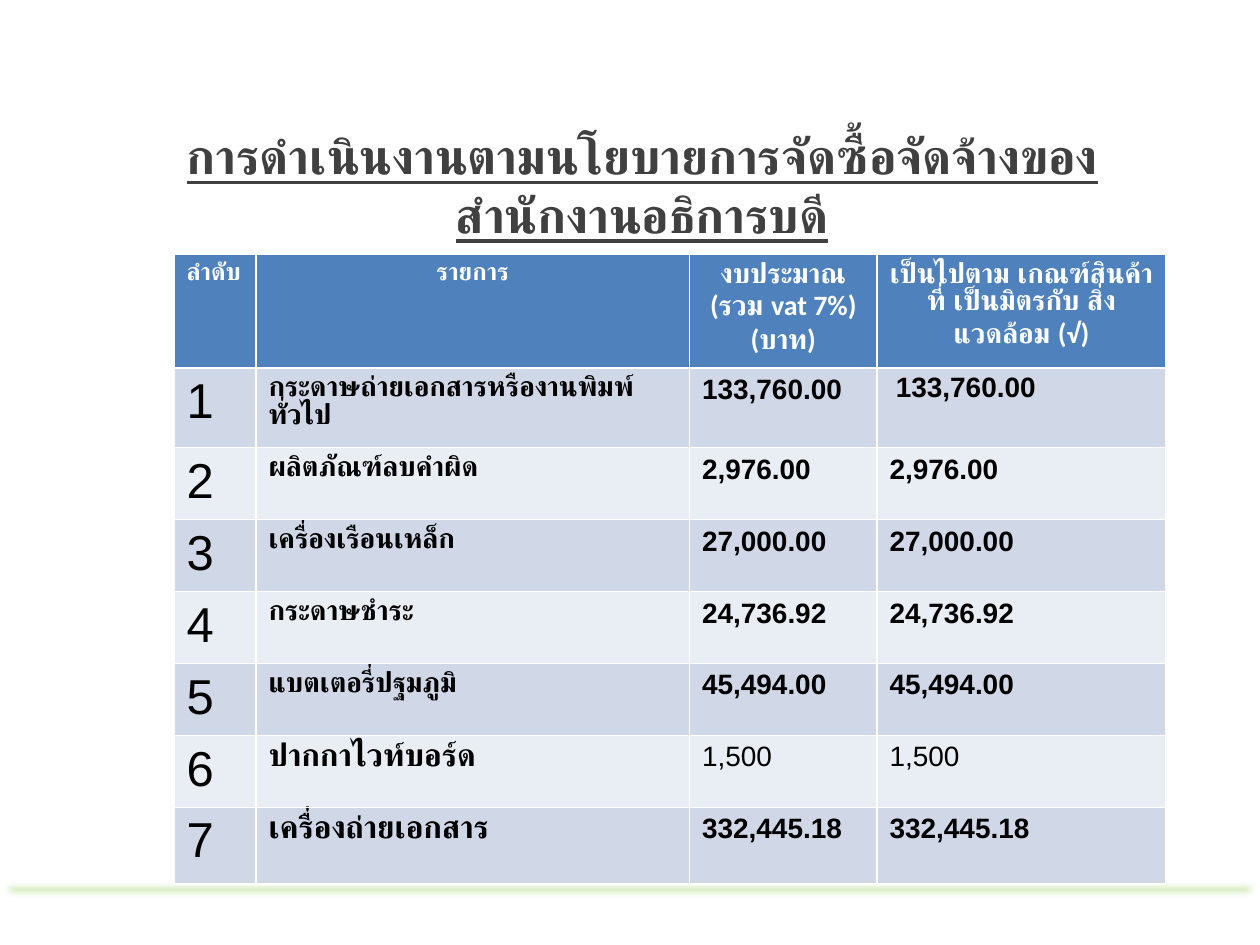
from lxml import etree
from pptx import Presentation
from pptx.dml.color import RGBColor
from pptx.enum.shapes import MSO_SHAPE
from pptx.enum.text import MSO_ANCHOR, PP_ALIGN
from pptx.oxml.ns import qn
from pptx.util import Cm, Pt

WHITE = RGBColor(0xFF, 0xFF, 0xFF)
BLACK = RGBColor(0, 0, 0)
GRAY = RGBColor(0x40, 0x40, 0x40)
GREEN = RGBColor(0x7E, 0xC2, 0x34)
BLUE = RGBColor(0x4F, 0x81, 0xBD)
BANDS = [RGBColor(0xE9, 0xED, 0xF4), RGBColor(0xD0, 0xD8, 0xE8)]


def write(frame, text, color, align=PP_ALIGN.LEFT, **format_values):
    para = frame.paragraphs[0]
    para.alignment = align
    span = para.add_run()
    span.text = text
    span.font.color.rgb = color
    for name, value in format_values.items():
        setattr(span.font, name, value)
    return para


deck = Presentation()
deck.slide_width, deck.slide_height = Cm(25.4), Cm(19.05)
page = deck.slides.add_slide(deck.slide_layouts[6])

strip = page.shapes.add_shape(MSO_SHAPE.RECTANGLE, 0, Cm(17.73), deck.slide_width, Cm(0.4))
strip.fill.solid()
strip.fill.fore_color.rgb = GREEN
strip.line.fill.background()
effects = etree.SubElement(strip._element.spPr, qn("a:effectLst"))
etree.SubElement(effects, qn("a:softEdge"), rad=str(Pt(5)))

title = page.shapes.add_textbox(Cm(3.38), Cm(2.41), Cm(19.13), Cm(3.18))
title.text_frame.word_wrap = True
title.text_frame.vertical_anchor = MSO_ANCHOR.TOP
write(title.text_frame, "การดำเนินงานตามนโยบายการจัดซื้อจัดจ้างของสำนักงานอธิการบดี",
      GRAY, PP_ALIGN.CENTER, name="Lato", size=Pt(28), bold=True, underline=True)

headers = [
    ("ลำดับ", PP_ALIGN.LEFT, "Arial", 14),
    ("รายการ", PP_ALIGN.CENTER, "Arial", 14),
    ("งบประมาณ (รวม vat 7%) (บาท)", PP_ALIGN.CENTER, "Calibri", 16),
    ("เป็นไปตาม เกณฑ์สินค้าที่ เป็นมิตรกับ สิ่งแวดล้อม (√)", PP_ALIGN.CENTER, "Calibri", 16),
]
items = [
    ("กระดาษถ่ายเอกสารหรืองานพิมพ์ทั่วไป", "133,760.00", "Arial", 16, True),
    ("ผลิตภัณฑ์ลบคำผิด", "2,976.00", "Calibri", 16, True),
    ("เครื่องเรือนเหล็ก", "27,000.00", "Calibri", 16, True),
    ("กระดาษชำระ", "24,736.92", "Calibri", 16, True),
    ("แบตเตอรี่ปฐมภูมิ", "45,494.00", "Calibri", 16, True),
    ("ปากกาไวท์บอร์ด", "1,500", "Arial", 18, False),
    ("เครื่องถ่ายเอกสาร", "332,445.18", "Calibri", 18, True),
]
widths = [1.65, 8.74, 3.78, 5.82]
heights = [1.6] + [1.45] * 6 + [1.55]

table = page.shapes.add_table(len(heights), len(widths), Cm(3.51), Cm(5.13),
                              Cm(sum(widths)), Cm(sum(heights))).table
for column, width in zip(table.columns, widths):
    column.width = Cm(width)
for row, height in zip(table.rows, heights):
    row.height = Cm(height)

for cell, (text, align, font, size) in zip(table.rows[0].cells, headers):
    cell.fill.solid()
    cell.fill.fore_color.rgb = BLUE
    write(cell.text_frame, text, WHITE, align, name=font, size=Pt(size), bold=True)

for number, (item, amount, font, size, bold) in enumerate(items, 1):
    entries = [
        (str(number), "Arial", 28, False),
        (item, font, size, True),
        (amount, "Arial", 16, bold),
        (amount, "Arial", 16, bold),
    ]
    for cell, (text, name, points, weight) in zip(table.rows[number].cells, entries):
        cell.fill.solid()
        cell.fill.fore_color.rgb = BANDS[number % 2]
        write(cell.text_frame, text, BLACK, name=name, size=Pt(points), bold=weight)

first_result = table.cell(1, 3)
margins = {"margin_left": Cm(0.38), "margin_top": 0, "margin_right": 0, "margin_bottom": 0}
for name, value in margins.items():
    setattr(first_result, name, value)
first_result.text_frame.paragraphs[0].line_spacing = 1.15

deck.save("out.pptx")
